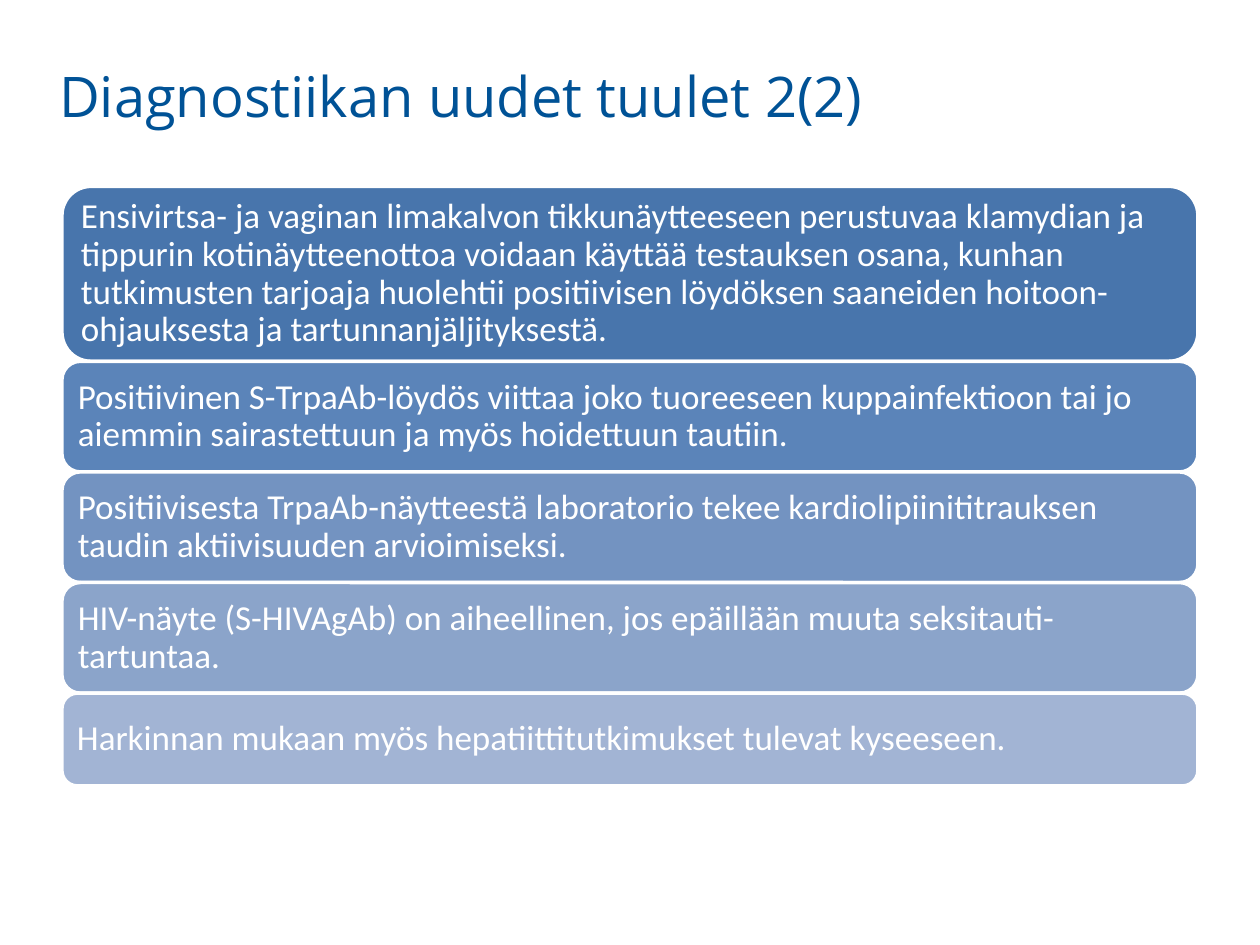
from pptx import Presentation
from pptx.dml.color import RGBColor
from pptx.enum.shapes import MSO_SHAPE as SHAPE
from pptx.enum.text import MSO_ANCHOR as ANCHOR, PP_ALIGN as ALIGN
from pptx.util import Pt

TITLE = "Diagnostiikan uudet tuulet 2(2)"
BARS = [
    ("Ensivirtsa- ja vaginan limakalvon tikkunäytteeseen perustuvaa klamydian ja "
     "tippurin kotinäytteenottoa voidaan käyttää testauksen osana, kunhan "
     "tutkimusten tarjoaja huolehtii positiivisen löydöksen saaneiden "
     "hoitoon-ohjauksesta ja tartunnanjäljityksestä.", "4875AC", 100),
    ("Positiivinen S-TrpaAb-löydös viittaa joko tuoreeseen kuppainfektioon tai jo "
     "aiemmin sairastettuun ja myös hoidettuun tautiin.", "5B84B9", 63.2),
    ("Positiivisesta TrpaAb-näytteestä laboratorio tekee kardiolipiinititrauksen "
     "taudin aktiivisuuden arvioimiseksi.", "7393C1", 63.2),
    ("HIV-näyte (S-HIVAgAb) on aiheellinen, jos epäillään muuta "
     "seksitauti-tartuntaa.", "8BA4CA", 63.2),
    ("Harkinnan mukaan myös hepatiittitutkimukset tulevat kyseeseen.", "A2B4D4", 53),
]
LEFT, TOP, WIDTH, INSET = 35.4, 106.5, 649.2, 6


def rgb(color):
    return RGBColor.from_string(color)


def write(tf, text, font, size, color):
    p = tf.paragraphs[0]
    p.text = text
    p.alignment = ALIGN.LEFT
    p.font.name, p.font.size = font, Pt(size)
    p.font.color.rgb = rgb(color)
    return p


def add_bar(slide, text, color, top, height):
    sp = slide.shapes.add_shape(SHAPE.ROUNDED_RECTANGLE, Pt(LEFT), Pt(top), Pt(WIDTH), Pt(height))
    sp.shadow.inherit = False
    sp.fill.solid()
    sp.fill.fore_color.rgb = rgb(color)
    sp.line.color.rgb = rgb("FFFFFF")
    sp.line.width = Pt(2)
    tf = sp.text_frame
    tf.word_wrap = True
    tf.vertical_anchor = ANCHOR.MIDDLE
    tf.margin_left = tf.margin_right = tf.margin_top = tf.margin_bottom = Pt(INSET)
    write(tf, text, "Calibri", 20, "FFFFFF").line_spacing = 0.9


prs = Presentation()
prs.slide_width, prs.slide_height = Pt(720), Pt(540)
slide = prs.slides.add_slide(prs.slide_layouts[5])

title = slide.shapes.title
title.left, title.top, title.width, title.height = Pt(26.6), Pt(31.7), Pt(649.4), Pt(90.7)
title.text_frame.vertical_anchor = ANCHOR.TOP
write(title.text_frame, TITLE, "Open Sans", 32, "005296")

top = TOP
for text, color, height in BARS:
    add_bar(slide, text, color, top, height)
    top += height

prs.save("out.pptx")
